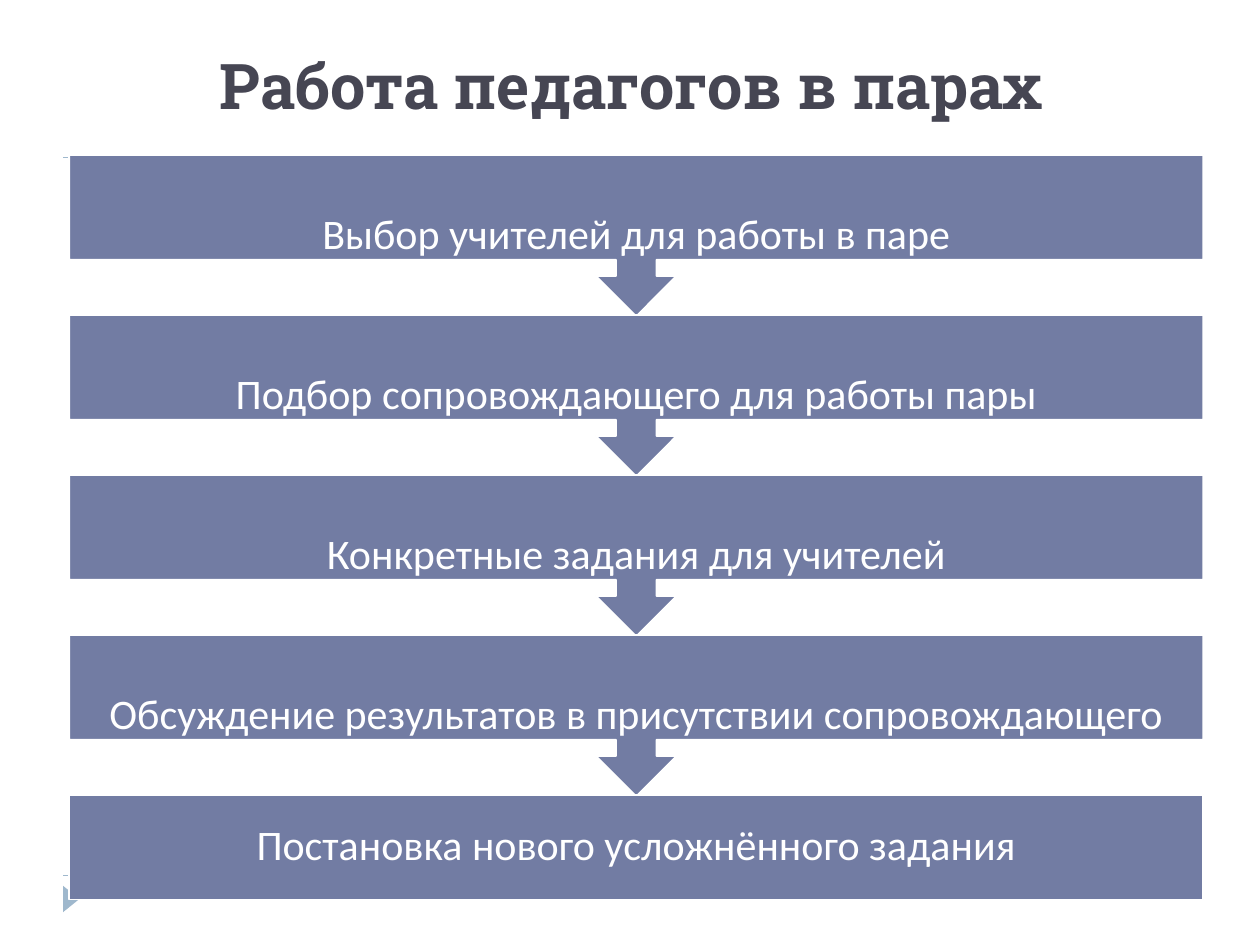
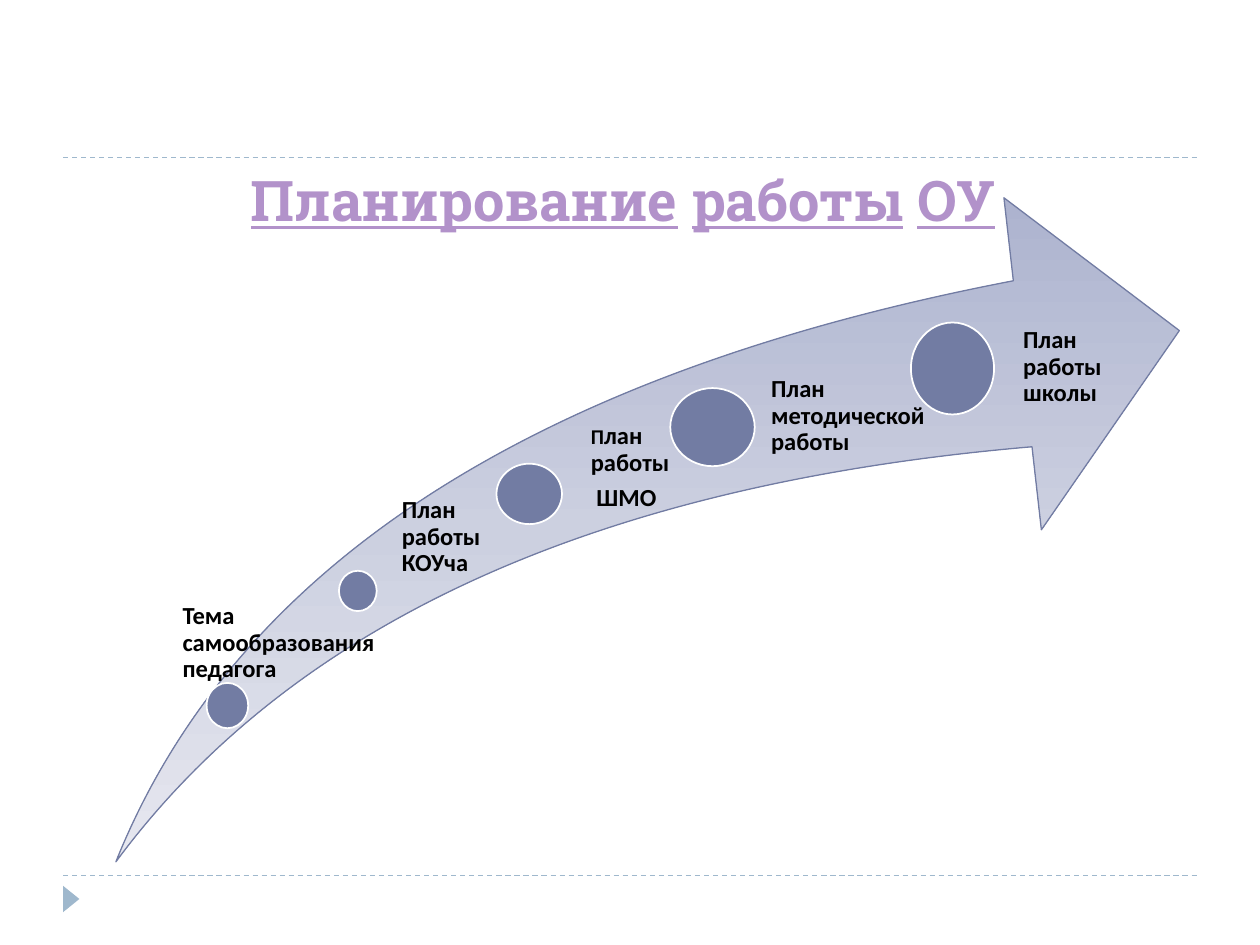
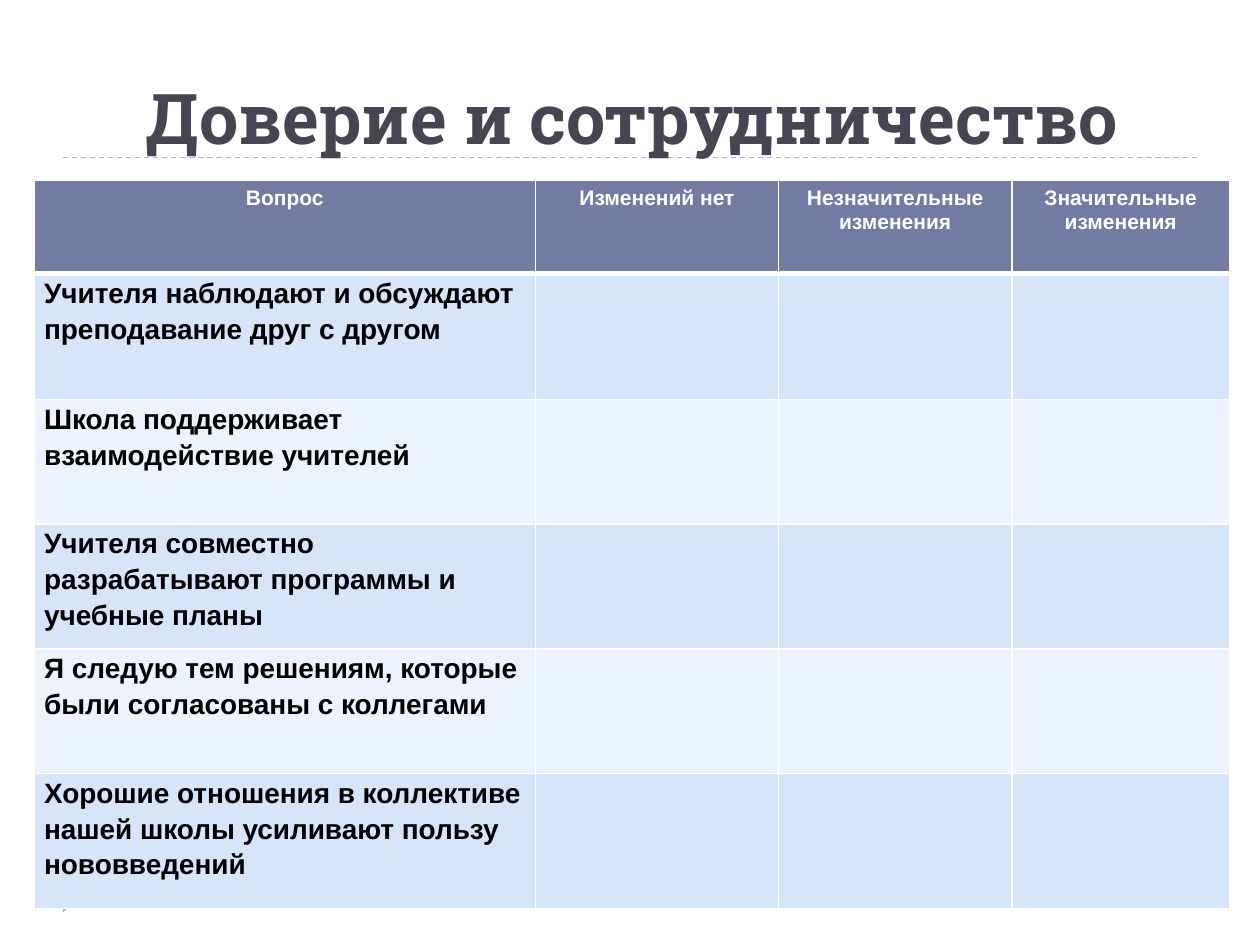
from lxml.etree import SubElement
from pptx import Presentation
from pptx.dml.color import RGBColor
from pptx.enum.dml import MSO_LINE
from pptx.enum.shapes import MSO_CONNECTOR, MSO_SHAPE as Preset
from pptx.enum.text import MSO_ANCHOR as Anchor, MSO_AUTO_SIZE as AutoSize, PP_ALIGN as Align
from pptx.oxml.ns import qn
from pptx.util import Inches, Pt

COLORS = {
    "accent": "727CA3", "guide": "9FB8CD", "title": "464653", "link": "B292CA",
    "space": "525B7E", "white": "FFFFFF", "black": "000000",
    "band_dark": "D7E5F9", "band_light": "ECF3FC",
}
SWOOSH_STOPS = [(0, "ADB3CF"), (50, "CCD0E0"), (100, "E6E7EF")]
TITLE_FONT, LABEL_FONT, TABLE_FONT = "Roboto Slab", "Calibri", "Arial"
WIDTH, HEIGHT, MARGIN = 10, 7.5, 0.5
GUIDE_TOPS = (1.25, 6.95)

PAIR_TITLE = "Работа педагогов в парах"
STEPS = [
    "Выбор учителей для работы в паре",
    "Подбор сопровождающего для работы пары",
    "Конкретные задания для учителей",
    "Обсуждение результатов в присутствии сопровождающего",
    "Постановка нового усложнённого задания",
]
STEP_LEFT, STEP_TOP, STEP_WIDTH, STEP_PITCH = 0.55, 1.23, 9, 1.27
CALLOUT_HEIGHT, BODY_HEIGHT = 1.28, 0.83

PLAN_WORDS = ["Планирование", "работы", "ОУ"]
MILESTONES = [
    {"dot": (1.64, 5.42, 0.33, 0.36), "label": (1.35, 4.79, 1.79, 2.75), "indent": 0.1,
     "lines": [[("Тема самообразования педагога", 14)]]},
    {"dot": (2.69, 4.53, 0.3, 0.32), "label": (3.03, 3.95, 0.96, 3.49), "indent": 0.16,
     "lines": [[("План работы КОУча", 14)]]},
    {"dot": (3.94, 3.68, 0.52, 0.48), "label": (4.48, 3.36, 1.04, 3.92), "indent": 0.21,
     "lines": [[("П", 12), ("лан работы", 14)], [(" ШМО", 14)]]},
    {"dot": (5.32, 3.08, 0.67, 0.62), "label": (5.84, 2.99, 1.67, 4.09), "indent": 0.28,
     "lines": [[("План методической работы", 14)]]},
    {"dot": (7.23, 2.56, 0.66, 0.73), "label": (7.77, 2.6, 1.2, 4.53), "indent": 0.35,
     "lines": [[("План работы школы", 14)]]},
]

TRUST_TITLE = "Доверие и сотрудничество"
HEADERS = ["Вопрос", "Изменений нет", "Незначительные изменения", "Значительные изменения"]
QUESTIONS = [
    "Учителя наблюдают и обсуждают преподавание друг с другом",
    "Школа поддерживает взаимодействие учителей",
    "Учителя совместно разрабатывают программы и учебные планы",
    "Я следую тем решениям, которые были согласованы с коллегами",
    "Хорошие отношения в коллективе нашей школы усиливают пользу нововведений",
]
COLUMN_WIDTHS = [3.98, 1.93, 1.85, 1.73]
ROW_HEIGHTS = [0.74, 1, 0.99, 0.99, 0.99, 1.07]


def rgb(name):
    return RGBColor.from_string(COLORS[name])


def inches(*lengths):
    return [Inches(length) for length in lengths]


def style(span, font, size, color, bold=False):
    span.font.name, span.font.size, span.font.bold = font, Pt(size), bold
    span.font.color.rgb = rgb(color)


def set_insets(holder, left, top, right, bottom):
    (holder.margin_left, holder.margin_top,
     holder.margin_right, holder.margin_bottom) = inches(left, top, right, bottom)


def add_figure(page, preset, place, fill, line=None, weight=1):
    shape = page.shapes.add_shape(preset, *inches(*place))
    shape.shadow.inherit = False
    shape.fill.solid()
    shape.fill.fore_color.rgb = rgb(fill)
    if line:
        shape.line.color.rgb = rgb(line)
        shape.line.width = Pt(weight)
    else:
        shape.line.fill.background()
    return shape


def decorate_master(deck, page):
    parts = []
    for top in GUIDE_TOPS:
        guide = page.shapes.add_connector(
            MSO_CONNECTOR.STRAIGHT, *inches(MARGIN, top, WIDTH - MARGIN, top))
        guide.line.color.rgb = rgb("guide")
        guide.line.width = Pt(0.75)
        guide.line.dash_style = MSO_LINE.DASH
        SubElement(guide.element.spPr, qn("a:effectLst"))
        parts.append(guide)
    marker = add_figure(page, Preset.ISOSCELES_TRIANGLE, (0.46, 7.07, 0.21, 0.13), "guide")
    marker.rotation = 90
    parts.append(marker)
    for number, part in enumerate(parts, 101):
        part.element.xpath(".//p:cNvPr")[0].set("id", str(number))
        deck.slide_master.shapes.element.append(part.element)


def add_page(deck, place, size, spans):
    page = deck.slides.add_slide(deck.slide_layouts[5])
    title = page.shapes.title
    title.left, title.top, title.width, title.height = inches(*place)
    frame = title.text_frame
    frame.auto_size, frame.vertical_anchor, frame.word_wrap = AutoSize.NONE, Anchor.BOTTOM, True
    para = frame.paragraphs[0]
    para.alignment = Align.CENTER
    for text, color in spans:
        span = para.add_run()
        span.text = text
        style(span, TITLE_FONT, size, color, True)
        span.font.underline = color == "link"
    return page


def add_steps(page):
    for index, text in enumerate(STEPS):
        last = index == len(STEPS) - 1
        preset = Preset.RECTANGLE if last else Preset.DOWN_ARROW_CALLOUT
        height = BODY_HEIGHT if last else CALLOUT_HEIGHT
        place = (STEP_LEFT, STEP_TOP + index * STEP_PITCH, STEP_WIDTH, height)
        box = add_figure(page, preset, place, "accent", "white")
        frame = box.text_frame
        frame.word_wrap, frame.vertical_anchor = True, Anchor.MIDDLE
        set_insets(frame, 0.19, height - BODY_HEIGHT, 0.19, 0)
        frame.text = text
        para = frame.paragraphs[0]
        para.alignment, para.line_spacing = Align.CENTER, 0.9
        style(para.runs[0], LABEL_FONT, 24, "white")


def add_swoosh(page):
    swoosh = add_figure(page, Preset.SWOOSH_ARROW, (0.92, 1.57, 8.44, 5.27),
                        "accent", "accent", 0.75)
    swoosh.adjustments[0] = swoosh.adjustments[1] = 0.25
    swoosh.fill.gradient()
    gradient = swoosh.element.spPr.find(qn("a:gradFill"))
    for child in list(gradient):
        gradient.remove(child)
    stops = SubElement(gradient, qn("a:gsLst"))
    for position, color in SWOOSH_STOPS:
        stop = SubElement(stops, qn("a:gs"), pos=str(position * 1000))
        SubElement(stop, qn("a:srgbClr"), val=color)
    SubElement(gradient, qn("a:lin"), ang="5400000", scaled="0")


def add_milestone(page, milestone):
    add_figure(page, Preset.OVAL, milestone["dot"], "accent", "white")
    frame = page.shapes.add_textbox(*inches(*milestone["label"])).text_frame
    frame.word_wrap = True
    set_insets(frame, milestone["indent"], 0, 0, 0)
    for index, line in enumerate(milestone["lines"]):
        para = frame.add_paragraph() if index else frame.paragraphs[0]
        para.line_spacing, para.space_after = 0.9, Pt(5)
        for text, size in line:
            span = para.add_run()
            span.text = text
            style(span, LABEL_FONT, size, "black", True)


def set_borders(cell, row):
    weights = {"lnL": 1, "lnR": 1, "lnT": 3 if row == 1 else 1, "lnB": 3 if row == 0 else 1}
    properties = cell._tc.get_or_add_tcPr()
    for side, weight in weights.items():
        border = SubElement(properties, qn(f"a:{side}"), w=str(Pt(weight)))
        fill = SubElement(border, qn("a:solidFill"))
        SubElement(fill, qn("a:srgbClr"), val=COLORS["white"])


def add_survey(page):
    rows = [HEADERS] + [[question, "", "", ""] for question in QUESTIONS]
    place = (0.27, 1.43, sum(COLUMN_WIDTHS), sum(ROW_HEIGHTS))
    table = page.shapes.add_table(len(rows), len(HEADERS), *inches(*place)).table
    for column, width in zip(table.columns, COLUMN_WIDTHS):
        column.width = Inches(width)
    for row, height in zip(table.rows, ROW_HEIGHTS):
        row.height = Inches(height)
    for r, texts in enumerate(rows):
        fill = "accent" if r == 0 else "band_dark" if r % 2 else "band_light"
        for c, text in enumerate(texts):
            cell = table.cell(r, c)
            set_borders(cell, r)
            cell.fill.solid()
            cell.fill.fore_color.rgb = rgb(fill)
            if not text:
                continue
            cell.text = text
            para = cell.text_frame.paragraphs[0]
            if r == 0:
                para.alignment = Align.CENTER
                style(para.runs[0], TABLE_FONT, 12, "white", True)
            else:
                set_insets(cell, 0.08, 0, 0.08, 0)
                para.line_spacing, para.space_after = 1.15, Pt(10)
                style(para.runs[0], TABLE_FONT, 16, "black", True)


def main():
    deck = Presentation()
    deck.slide_width, deck.slide_height = inches(WIDTH, HEIGHT)

    pairs = add_page(deck, (0.5, 0.3, 9, 0.72), 36, [(PAIR_TITLE, "title")])
    decorate_master(deck, pairs)
    add_steps(pairs)

    plan_spans = [span for word in PLAN_WORDS for span in ((word, "link"), (" ", "space"))]
    plan = add_page(deck, (0.5, 0.3, 9, 1.6), 32, plan_spans)
    add_swoosh(plan)
    for milestone in MILESTONES:
        add_milestone(plan, milestone)

    trust = add_page(deck, (0.31, 0.21, 9.41, 1.1), 40, [(TRUST_TITLE, "title")])
    add_survey(trust)

    deck.save("out.pptx")


if __name__ == "__main__":
    main()
